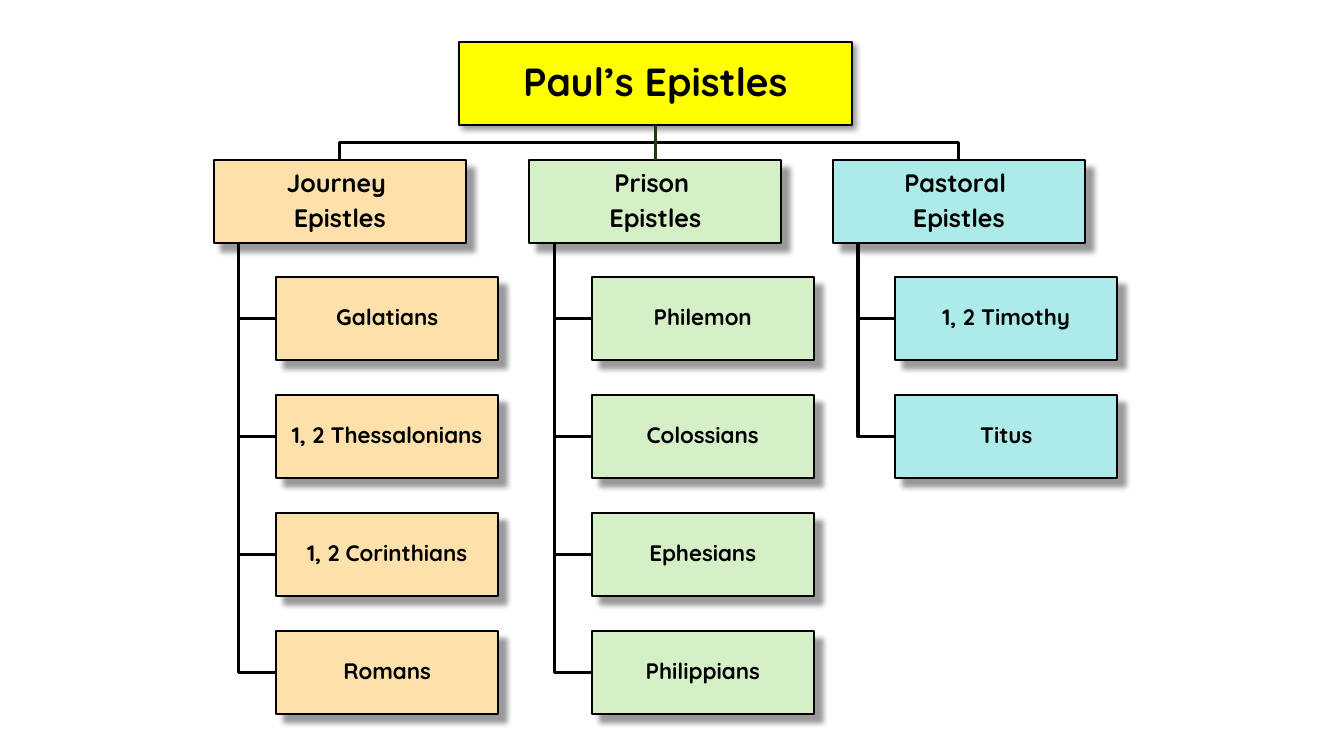
from dataclasses import dataclass

from lxml import etree
from pptx import Presentation
from pptx.dml.color import RGBColor
from pptx.enum.shapes import MSO_CONNECTOR, MSO_SHAPE
from pptx.enum.text import MSO_ANCHOR, PP_ALIGN
from pptx.oxml.ns import qn
from pptx.util import Inches, Pt

STRAIGHT = MSO_CONNECTOR.STRAIGHT
RECTANGLE = MSO_SHAPE.RECTANGLE
MIDDLE = MSO_ANCHOR.MIDDLE
CENTER = PP_ALIGN.CENTER
TOP_SIDE, BOTTOM_SIDE = 0, 2


@dataclass(frozen=True)
class Theme:
    font: str = "Quicksand"
    ink: str = "000000"
    trunk: str = "1F3A10"
    title_fill: str = "FFFF00"
    journey: str = "FEE0AB"
    prison: str = "D5EFC6"
    pastoral: str = "ACEBEA"
    title_size: int = 28
    group_size: int = 18
    letter_size: int = 16
    border: float = 1.5
    link: float = 2.25


THEME = Theme()

# Layout in inches
BOX_HEIGHT = 0.82
TITLE_LEFT, TITLE_TOP, TITLE_WIDTH = 4.55, 0.42, 3.9
GROUP_TOP, GROUP_WIDTH = 1.59, 2.5
LETTER_TOP, LETTER_WIDTH, LETTER_PITCH = 2.75, 2.2, 1.17
STEM_INDENT, LETTER_INDENT = 0.25, 0.62

# Left edge, fill, heading lines, letters
GROUPS = [
    (2.12, THEME.journey, ["Journey ", "Epistles"],
     ["Galatians", "1, 2 Thessalonians", "1, 2 Corinthians", "Romans"]),
    (5.25, THEME.prison, ["Prison ", "Epistles"],
     ["Philemon", "Colossians", "Ephesians", "Philippians"]),
    (8.26, THEME.pastoral, ["Pastoral ", "Epistles"],
     ["1, 2 Timothy", "Titus"]),
]


class ChartPage:
    """Holds the theme and the slide being drawn."""

    def __init__(self, page, theme):
        self.page = page
        self.theme = theme

    def outline(self, line, color, width):
        line.color.rgb = RGBColor.from_string(color)
        line.width = Pt(width)

    def add_shadow(self, box, distance):
        """Cast a soft shadow to the lower right, distance in points."""
        box.shadow.inherit = False
        effects = box._element.spPr.find(qn("a:effectLst"))
        shadow = etree.SubElement(
            effects, qn("a:outerShdw"), blurRad=str(Pt(4)),
            dist=str(Pt(distance)), dir="2700000", algn="tl",
            rotWithShape="0")
        color = etree.SubElement(shadow, qn("a:srgbClr"), val=self.theme.ink)
        etree.SubElement(color, qn("a:alpha"), val="40000")

    def add_box(self, left, top, width, fill, lines, size,
                inset=0.01, shadow=8):
        box = self.page.shapes.add_shape(
            RECTANGLE, Inches(left), Inches(top),
            Inches(width), Inches(BOX_HEIGHT))
        box.fill.solid()
        box.fill.fore_color.rgb = RGBColor.from_string(fill)
        self.outline(box.line, self.theme.ink, self.theme.border)
        self.add_shadow(box, shadow)
        frame = box.text_frame
        frame.word_wrap = True
        frame.vertical_anchor = MIDDLE
        frame.margin_left = frame.margin_right = Inches(inset)
        frame.margin_top = frame.margin_bottom = Inches(inset)
        for index, line in enumerate(lines):
            para = frame.add_paragraph() if index else frame.paragraphs[0]
            para.alignment = CENTER
            para.line_spacing = 0.9
            para.space_after = Pt(round(0.3 * size, 1))
            span = para.add_run()
            span.text = line
            span.font.name = self.theme.font
            span.font.size = Pt(size)
            span.font.bold = True
            span.font.color.rgb = RGBColor.from_string(self.theme.ink)
        return box

    def add_elbow(self, *points):
        """Draw an open angled line through points given in inches."""
        start, *corners = [(Inches(x), Inches(y)) for x, y in points]
        builder = self.page.shapes.build_freeform(*start)
        builder.add_line_segments(corners, close=False)
        elbow = builder.convert_to_shape()
        elbow.fill.background()
        elbow.shadow.inherit = False
        self.outline(elbow.line, self.theme.ink, self.theme.link)

    def add_trunk(self, upper, lower):
        """Join the bottom of one box to the top of another."""
        trunk = self.page.shapes.add_connector(STRAIGHT, 0, 0, 0, 0)
        trunk.begin_connect(upper, BOTTOM_SIDE)
        trunk.end_connect(lower, TOP_SIDE)
        self.outline(trunk.line, self.theme.trunk, self.theme.link)
        etree.SubElement(trunk._element.spPr, qn("a:effectLst"))


def letter_top(row):
    return LETTER_TOP + row * LETTER_PITCH


def draw_links(chart):
    title_center = TITLE_LEFT + TITLE_WIDTH / 2
    title_bottom = TITLE_TOP + BOX_HEIGHT
    branch = (title_bottom + GROUP_TOP) / 2
    for left, _, _, letters in GROUPS:
        center = left + GROUP_WIDTH / 2
        if center != title_center:
            chart.add_elbow((title_center, title_bottom),
                            (title_center, branch),
                            (center, branch), (center, GROUP_TOP))
        stem = left + STEM_INDENT
        for row in reversed(range(len(letters))):
            middle = letter_top(row) + BOX_HEIGHT / 2
            chart.add_elbow((stem, GROUP_TOP + BOX_HEIGHT), (stem, middle),
                            (left + LETTER_INDENT, middle))


def draw_boxes(chart):
    title = chart.add_box(TITLE_LEFT, TITLE_TOP, TITLE_WIDTH,
                          THEME.title_fill, ["Paul’s Epistles"],
                          THEME.title_size, inset=0.02, shadow=3)
    for left, fill, heading, letters in GROUPS:
        group = chart.add_box(left, GROUP_TOP, GROUP_WIDTH, fill, heading,
                              THEME.group_size)
        if group.left + group.width // 2 == title.left + title.width // 2:
            chart.add_trunk(title, group)
        for row, letter in enumerate(letters):
            chart.add_box(left + LETTER_INDENT, letter_top(row),
                          LETTER_WIDTH, fill, [letter], THEME.letter_size)


def main():
    deck = Presentation()
    deck.slide_width = Inches(13.33)
    deck.slide_height = Inches(7.5)
    page = deck.slides.add_slide(deck.slide_layouts[6])
    chart = ChartPage(page, THEME)
    draw_links(chart)
    draw_boxes(chart)
    deck.save("out.pptx")


if __name__ == "__main__":
    main()
